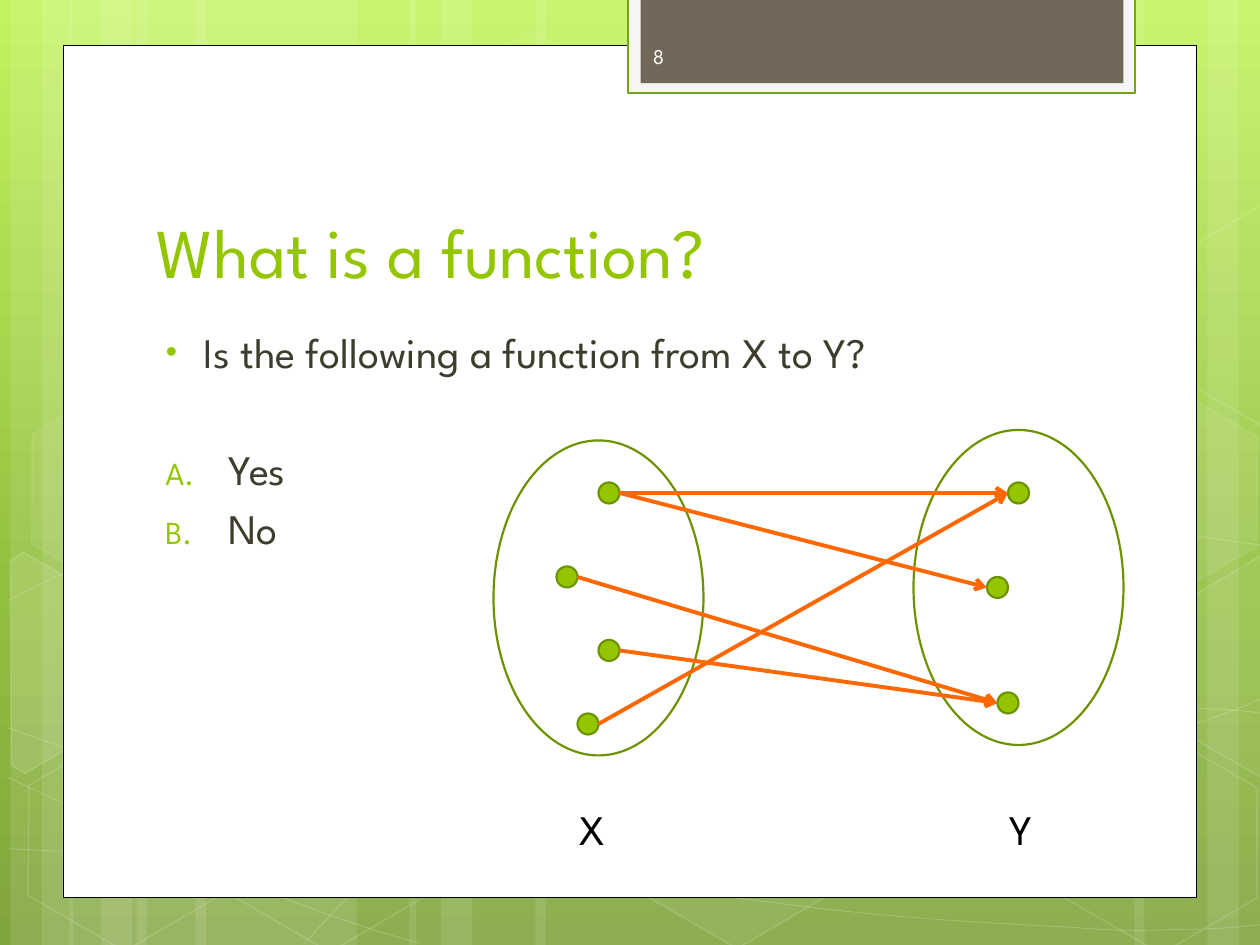
import copy
import math
from dataclasses import dataclass

import lxml.etree
import pptx
import pptx.dml.color
import pptx.enum.shapes
import pptx.enum.text
import pptx.oxml.ns
import pptx.util

Pt = pptx.util.Pt
qn = pptx.oxml.ns.qn
SHAPE = pptx.enum.shapes.MSO_SHAPE
ANCHOR = pptx.enum.text.MSO_ANCHOR


@dataclass(frozen=True)
class Theme:
    font: str = "League Spartan"
    green: str = "94C600"
    outline: str = "6D9200"
    ink: str = "3E3D2D"
    arrow: str = "FF6700"
    white: str = "FFFFFF"
    black: str = "000000"
    tab: str = "71685A"
    tab_rim: str = "F5F5F5"
    tab_line: str = "74A510"
    number: str = "FEFEFE"
    sky: tuple = ((0, "C3F35F"), (0.62, "93BF3F"), (1, "81A53E"))
    title_size: int = 40
    body_size: int = 24
    number_size: int = 12


THEME = Theme()

# Content
TITLE = "What is a function?"
QUESTION = "Is the following a function from X to Y?"
ANSWERS = ["Yes", "No"]
PAGE_NUMBER = "8"
DOT = 12
SETS = {  # oval box, label position, top left of each dot
    "X": ((282, 251.7, 120, 180), (324, 455.7),
          [(342, 275.7), (318, 323.7), (342, 365.7), (330, 407.7)]),
    "Y": ((522, 245.7, 120, 180), (570, 455.7),
          [(576, 275.7), (564, 329.7), (570, 395.7)]),
}
MAPPING = [(0, 0), (0, 1), (1, 2), (2, 2), (3, 0)]  # X dot to Y dot

# Backdrop: stripes as (left, width), hexagons as (left, top, fill %, line %)
TILT = 30
STRIPES = [(78, 126), (6, 36), (24, 60), (111.6, 126), (39.6, 36), (57.6, 60),
           (528, 126), (690, 36), (648, 60), (306, 222), (234, 36), (252, 60)]
HEXAGONS = [(240.5, 26, 4, 8), (358, 424, 6, 12), (8, 425.5, 0, 12), (10, 224.6, 7, 8),
            (125.3, 426, 0, 12), (600.5, 427, 0, 12), (600.5, 226, 7, 8)]
EDGE_HEXAGONS = [  # corners as they show, centre of tilt, fill %
    ([(6, 320.4), (13.7, 315.4), (69.1, 347), (68.4, 410.4), (14.4, 442), (6, 437)],
     (25.9, 385.2), 10),
    ([(666.7, 349.2), (720.7, 317.5), (726.5, 321), (726.5, 441.4), (721.4, 444.2),
      (666.7, 412.6)], (709.2, 374.4), 4),
    ([(666.7, 149), (720.7, 117.4), (727.2, 121), (726.5, 241.2), (721.4, 244),
      (666.7, 212.4)], (709.2, 173.5), 0),
]
WAVES = [  # start, then two handles and an end for each cubic piece
    [(5, 485), (44, 487), (83, 489), (137, 488), (191, 487), (258, 486), (330, 479),
     (402, 472), (504, 458), (570, 444), (636, 430), (703, 409), (725, 397)],
    [(5, 343), (26, 332), (47, 321), (87, 310), (128, 300), (186, 284), (250, 279),
     (314, 274), (392, 273), (471, 279), (550, 284), (682, 307), (725, 312)],
    [(4, 444), (89, 484), (178, 523), (240, 539)],
    [(5, 416), (27, 424), (50, 432), (92, 444), (134, 454), (197, 472), (257, 485),
     (317, 497), (392, 510), (452, 517), (512, 525), (576, 528), (614, 530),
     (652, 533), (662, 531), (680, 531), (699, 531), (712, 529), (725, 528)],
    [(174, 539), (187, 525), (200, 510), (217, 498), (235, 485), (259, 470), (279, 460),
     (300, 450), (312, 446), (338, 438), (364, 431), (413, 421), (438, 416),
     (463, 411), (467, 411), (490, 410), (512, 408), (547, 405), (572, 405),
     (597, 404), (638, 405), (638, 405), (654, 405), (670, 405), (686, 405),
     (699, 405), (711, 406), (724, 408)],
]

deck = pptx.Presentation()
deck.slide_width, deck.slide_height = Pt(720), Pt(540)
slide = deck.slides.add_slide(deck.slide_layouts[5])
shapes = slide.shapes


def rgb(value):
    return pptx.dml.color.RGBColor.from_string(value)


def add_xml(parent, tag, **attributes):
    return lxml.etree.SubElement(parent, qn(tag), attributes)


def paint(fill, color, percent=100):
    if not color or not percent:
        fill.background()
        return
    fill.solid()
    fill.fore_color.rgb = rgb(color)
    if percent < 100:
        add_xml(fill._xPr.find(qn("a:solidFill"))[0], "a:alpha", val=str(percent * 1000))


def style(shape, fill=None, fill_percent=100, line=None, line_percent=100, weight=1):
    shape.shadow.inherit = False
    paint(shape.fill, fill, fill_percent)
    paint(shape.line.fill, line, line_percent)
    if line:
        shape.line.width = Pt(weight)


def add_preset(kind, box, **look):
    shape = shapes.add_shape(kind, *map(Pt, box))
    style(shape, **look)
    return shape


def add_outline(points, close, **look):
    builder = shapes.build_freeform(*points[0], scale=12700)
    builder.add_line_segments(points[1:], close=close)
    outline = builder.convert_to_shape()
    style(outline, **look)
    return outline


def bend(outline):
    """Turn each three straight segments into one cubic curve."""
    track = outline._element.find(".//" + qn("a:path"))
    segments = track.findall(qn("a:lnTo"))
    for i in range(0, len(segments), 3):
        curve = add_xml(track, "a:cubicBezTo")
        for segment in segments[i:i + 3]:
            curve.append(segment[0])
            track.remove(segment)


def turn(point, centre, degrees):
    angle = math.radians(degrees)
    dx, dy = point[0] - centre[0], point[1] - centre[1]
    return (centre[0] + dx * math.cos(angle) - dy * math.sin(angle),
            centre[1] + dx * math.sin(angle) + dy * math.cos(angle))


def write(frame, text, size=THEME.body_size, color=THEME.ink, anchor=ANCHOR.TOP,
          wrap=True, before=0, bullet=None, margin=0, hanging=0):
    frame.word_wrap, frame.vertical_anchor = wrap, anchor
    line = frame.add_paragraph() if frame.text else frame.paragraphs[0]
    line.alignment = pptx.enum.text.PP_ALIGN.LEFT
    line.space_before = Pt(before)
    run = line.add_run()
    run.text = text
    run.font.name, run.font.size, run.font.color.rgb = THEME.font, Pt(size), rgb(color)
    if bullet:
        properties = line._p.get_or_add_pPr()
        properties.set("marL", str(Pt(margin)))
        properties.set("indent", str(-Pt(hanging)))
        add_xml(add_xml(properties, "a:buClr"), "a:srgbClr", val=THEME.green)
        add_xml(properties, "a:buSzPct", val="76000")
        if bullet == "letter":
            add_xml(properties, "a:buFont", typeface=THEME.font)
            add_xml(properties, "a:buAutoNum", type="alphaUcPeriod")
        else:
            add_xml(properties, "a:buFont", typeface="Arial")
            add_xml(properties, "a:buChar", char=bullet)


def add_text_frame(*box):
    return shapes.add_textbox(*map(Pt, box)).text_frame


# Background gradient, top to bottom
sky = slide.background.fill
sky.gradient()
sky.gradient_angle = 270
stop_list = slide._element.find(".//" + qn("a:gsLst"))
stop_list.append(copy.deepcopy(stop_list[-1]))
for stop, (position, color) in zip(sky.gradient_stops, THEME.sky):
    stop.position, stop.color.rgb = position, rgb(color)

# Stripes, waves and hexagons
for left, width in STRIPES:
    add_preset(SHAPE.RECTANGLE, (left, 0, width, 540), fill=THEME.white, fill_percent=10)
for wave in WAVES:
    bend(add_outline(wave, False, line=THEME.white, line_percent=20, weight=0.5))
for left, top, fill_percent, line_percent in HEXAGONS:
    hexagon = add_preset(SHAPE.HEXAGON, (left, top, 126, 109.5), fill=THEME.white,
                         fill_percent=fill_percent, line=THEME.white, line_percent=line_percent)
    hexagon.adjustments[0] = 0.285
    hexagon.rotation = TILT
for corners, centre, fill_percent in EDGE_HEXAGONS:
    upright = [turn(corner, centre, -TILT) for corner in corners]
    add_outline(upright, True, fill=THEME.white, fill_percent=fill_percent,
                line=THEME.white, line_percent=12).rotation = TILT

# White panel and page tab
add_preset(SHAPE.RECTANGLE, (36, 26, 648, 487), fill=THEME.white, line=THEME.black, weight=0.5)
add_preset(SHAPE.RECTANGLE, (359, -1.5, 289.6, 54.5), fill=THEME.tab_rim,
           line=THEME.tab_line, weight=1.25)
add_preset(SHAPE.RECTANGLE, (366, -1.5, 276, 49), fill=THEME.tab)

# Title, moved in front of the panel
title = shapes.title
shapes._spTree.append(title._element)
title.left, title.top, title.width, title.height = map(Pt, (82.3, 80.5, 553, 90))
write(title.text_frame, TITLE, size=THEME.title_size, color=THEME.green, anchor=ANCHOR.BOTTOM)

# Question and answers
body = add_text_frame(82.3, 182.8, 533.5, 291)
write(body, QUESTION, before=4.8, bullet="•", margin=27, hanging=21.6)
for index, answer in enumerate(ANSWERS):
    write(body, answer, before=4.8 if index else 38.5, bullet="letter", margin=41.2, hanging=36)
write(add_text_frame(366, 17.6, 105, 29), PAGE_NUMBER, size=THEME.number_size,
      color=THEME.number, anchor=ANCHOR.MIDDLE)

# Sets with their labels and dots
for label, (oval, label_at, dots) in SETS.items():
    add_preset(SHAPE.OVAL, oval, line=THEME.outline, weight=1.25)
    write(add_text_frame(*label_at, 30, 36), label, color=THEME.black, wrap=False)
    for dot in dots:
        add_preset(SHAPE.OVAL, (*dot, DOT, DOT), fill=THEME.green,
                   line=THEME.outline, weight=1.25)

# Mapping arrows, from the right of an X dot to the left of a Y dot
for source, target in MAPPING:
    (x1, y1), (x2, y2) = SETS["X"][2][source], SETS["Y"][2][target]
    arrow = shapes.add_connector(pptx.enum.shapes.MSO_CONNECTOR.STRAIGHT,
                                 *map(Pt, (x1 + DOT, y1 + DOT / 2, x2, y2 + DOT / 2)))
    arrow.line.color.rgb, arrow.line.width = rgb(THEME.arrow), Pt(2.25)
    add_xml(arrow.line._ln, "a:tailEnd", type="arrow")
    add_xml(arrow._element.spPr, "a:effectLst")

deck.save("out.pptx")
